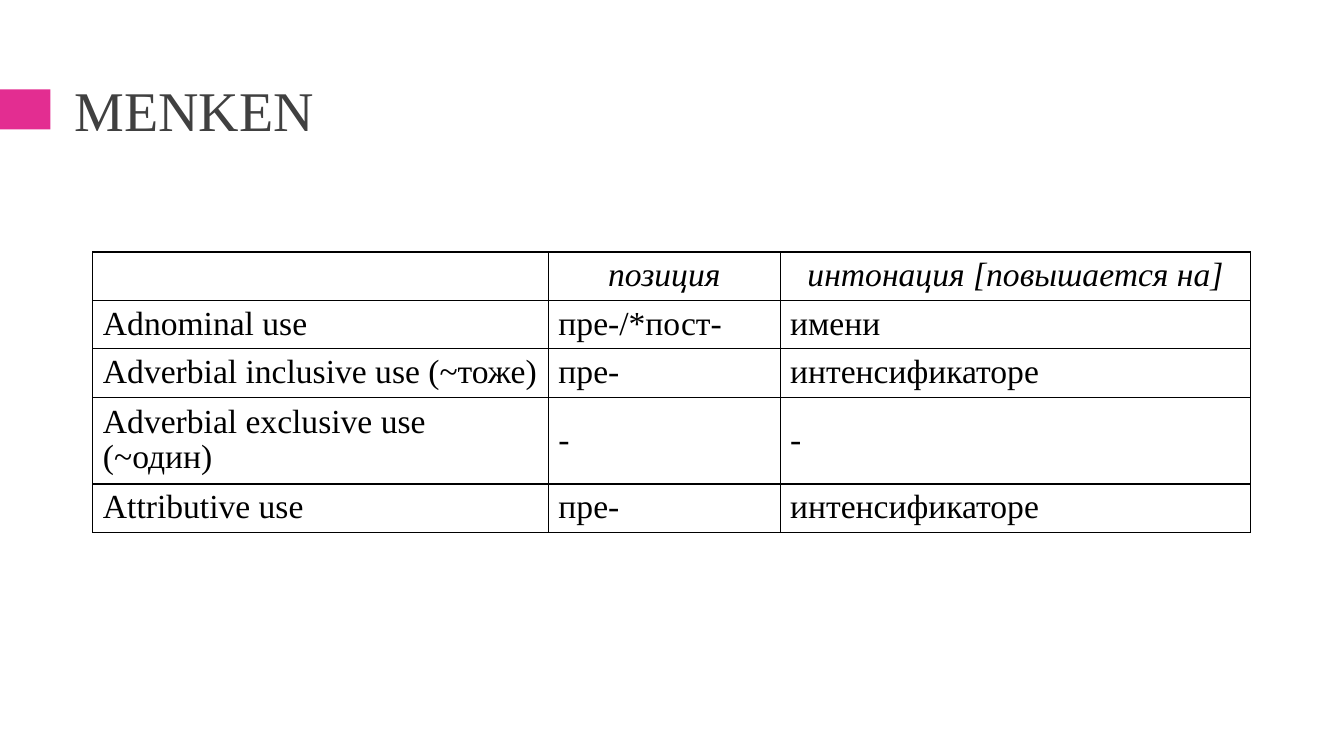
from lxml import etree
from pptx import Presentation
from pptx import util as u
from pptx.dml.color import RGBColor
from pptx.enum import shapes, text
from pptx.oxml.ns import qn

COLORS = {"accent": "E32D91", "title": "404040", "ink": "000000"}
FONT = "Times New Roman"


def write(frame, words, size=24, color="ink", italic=False,
          align=text.PP_ALIGN.LEFT, spacing=1.0):
    """Put one formatted paragraph into a text frame."""
    paragraph = frame.paragraphs[0]
    paragraph.alignment = align
    paragraph.line_spacing = spacing
    run = paragraph.add_run()
    run.text = words
    run.font.name = FONT
    run.font.size = u.Pt(size)
    run.font.bold = False
    run.font.italic = italic
    run.font.color.rgb = RGBColor.from_string(COLORS[color])


class SlideBuilder:
    def __init__(self, deck):
        self.slide = deck.slides.add_slide(deck.slide_layouts[6])

    def block(self, left, top, width, height, color):
        bar = self.slide.shapes.add_shape(
            shapes.MSO_SHAPE.RECTANGLE, *map(u.Cm, (left, top, width, height)))
        bar.shadow.inherit = False
        bar.fill.solid()
        bar.fill.fore_color.rgb = RGBColor.from_string(COLORS[color])
        bar.line.fill.background()

    def label(self, left, top, width, height, words, **style):
        frame = self.slide.shapes.add_textbox(
            *map(u.Cm, (left, top, width, height))).text_frame
        frame.word_wrap = True
        frame.vertical_anchor = text.MSO_ANCHOR.MIDDLE
        write(frame, words, **style)

    def border(self, cell):
        properties = cell._tc.get_or_add_tcPr()
        for position, side in enumerate(("lnL", "lnR", "lnT", "lnB")):
            line = etree.Element(qn(f"a:{side}"), w=str(u.Pt(1)))
            fill = etree.SubElement(line, qn("a:solidFill"))
            etree.SubElement(fill, qn("a:srgbClr"), val=COLORS["ink"])
            properties.insert(position, line)

    def table(self, left, top, widths, heights, rows):
        grid = self.slide.shapes.add_table(
            len(rows), len(widths), u.Cm(left), u.Cm(top),
            u.Cm(sum(widths)), u.Cm(sum(heights))).table
        grid.first_row = grid.horz_banding = False
        for column, width in zip(grid.columns, widths):
            column.width = u.Cm(width)
        for r, (row, height) in enumerate(zip(rows, heights)):
            grid.rows[r].height = u.Cm(height)
            for c, words in enumerate(row):
                cell = grid.cell(r, c)
                cell.fill.background()
                cell.vertical_anchor = text.MSO_ANCHOR.MIDDLE
                self.border(cell)
                if words:
                    header = r == 0
                    align = text.PP_ALIGN.CENTER if header else text.PP_ALIGN.LEFT
                    write(cell.text_frame, words, italic=header,
                          align=align, spacing=0.95)


def main():
    deck = Presentation()
    deck.slide_width, deck.slide_height = u.Cm(33.87), u.Cm(19.05)
    builder = SlideBuilder(deck)

    # Title with accent block
    builder.block(0, 2.25, 1.27, 1.01, "accent")
    builder.label(1.63, 1.73, 30.63, 2.06, "MENKEN", size=40, color="title")

    # Uses of the word by position and intonation
    uses = [
        ("", "позиция", "интонация [повышается на]"),
        ("Adnominal use", "пре-/*пост-", "имени"),
        ("Adverbial inclusive use (~тоже)", "пре-", "интенсификаторе"),
        ("Adverbial exclusive use (~один)", "-", "-"),
        ("Attributive use", "пре-", "интенсификаторе"),
    ]
    single, double = 1.18, 2.12
    builder.table(2.34, 6.35, (11.48, 5.84, 11.86),
                  (single, single, single, double, single), uses)

    deck.save("out.pptx")


if __name__ == "__main__":
    main()
